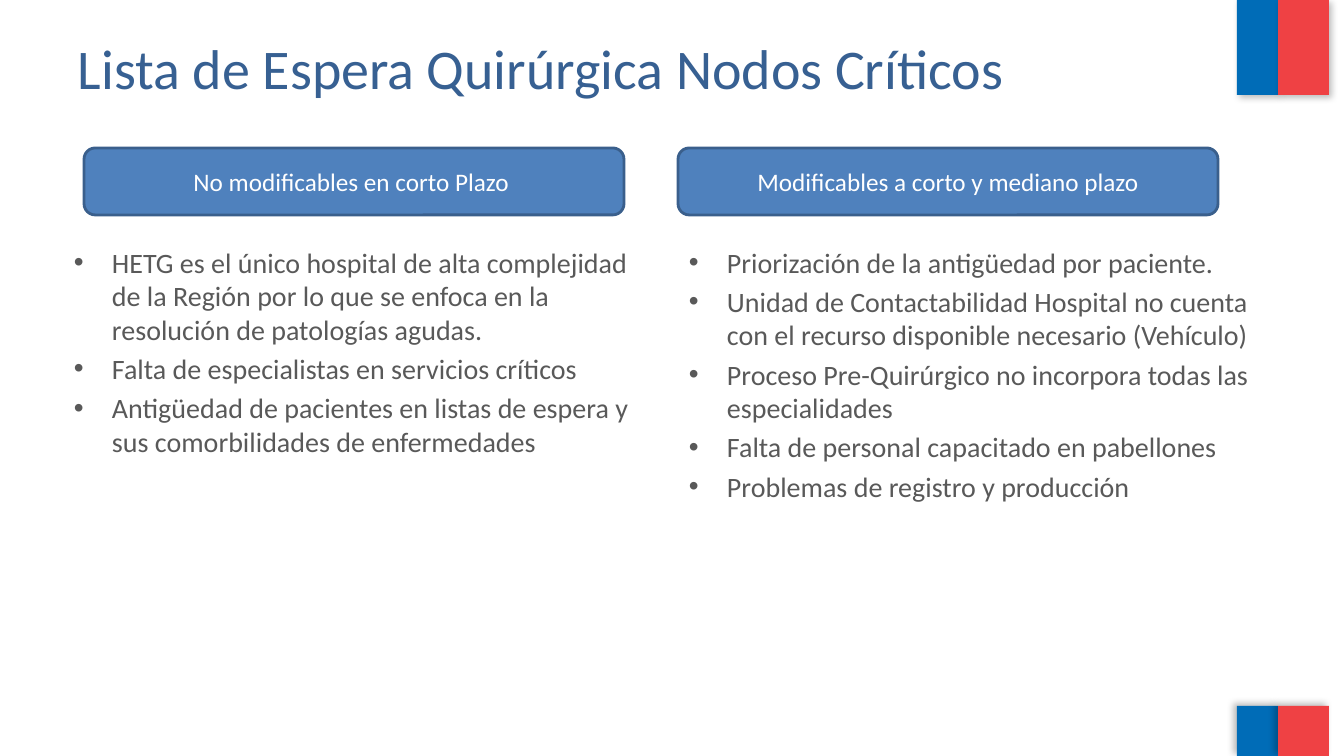
from typing import NamedTuple

from lxml import etree
from pptx import Presentation
from pptx import util as u
from pptx.dml.color import RGBColor
from pptx.enum import shapes, text
from pptx.oxml.ns import qn

EMU_PER_PX = 914400 / 100.8
FONT = "Calibri"
BLUE, RED = "006CB7", "EF4144"
INSET_X, INSET_Y = 6, 5


class Box(NamedTuple):
    left: int
    top: int
    width: int
    height: int


class FlagBlock(NamedTuple):
    box: Box
    color: str
    shadow_angle: int


class Column(NamedTuple):
    header: str
    header_box: Box
    body_box: Box
    points: list[str]


FLAG_BLOCKS = [
    FlagBlock(Box(1237, -1, 41, 96), BLUE, 45),
    FlagBlock(Box(1278, 0, 51, 95), RED, 45),
    FlagBlock(Box(1237, 706, 41, 50), BLUE, 215),
    FlagBlock(Box(1278, 706, 51, 50), RED, 215),
]

COLUMNS = [
    Column("No modificables en corto Plazo ", Box(84, 148, 540, 67), Box(68, 240, 594, 435), [
        "HETG es el único hospital de alta complejidad de la Región por lo que se enfoca "
        "en la resolución de patologías agudas.",
        "Falta de especialistas en servicios críticos",
        "Antigüedad de pacientes en listas de espera y sus comorbilidades de enfermedades",
    ]),
    Column("Modificables a corto y mediano plazo", Box(678, 148, 540, 67), Box(683, 240, 594, 435), [
        "Priorización de la antigüedad por paciente.",
        "Unidad de Contactabilidad Hospital no cuenta con el recurso disponible necesario (Vehículo)",
        "Proceso Pre-Quirúrgico no incorpora todas las especialidades",
        "Falta de personal capacitado en pabellones",
        "Problemas de registro y producción",
    ]),
]


def px(length: int) -> int:
    return round(length * EMU_PER_PX)


def rgb(color: str) -> RGBColor:
    return RGBColor.from_string(color)


def place(box: Box) -> list[int]:
    return [px(length) for length in box]


def add_run(paragraph, words: str, size: int, color: str) -> None:
    run = paragraph.add_run()
    run.text = words
    run.font.name, run.font.size = FONT, u.Pt(size)
    run.font.color.rgb = rgb(color)


def add_filled(slide, kind, box: Box, color: str):
    shape = slide.shapes.add_shape(kind, *place(box))
    shape.shadow.inherit = False
    shape.fill.solid()
    shape.fill.fore_color.rgb = rgb(color)
    return shape


def add_frame(slide, box: Box):
    frame = slide.shapes.add_textbox(*place(box)).text_frame
    frame.word_wrap = True
    frame.margin_left = frame.margin_right = px(INSET_X)
    frame.margin_top = frame.margin_bottom = px(INSET_Y)
    return frame


def add_flag_block(slide, block: FlagBlock) -> None:
    shape = add_filled(slide, shapes.MSO_SHAPE.RECTANGLE, block.box, block.color)
    shape.line.fill.background()
    effects = shape._element.spPr.find(qn("a:effectLst"))
    shadow = etree.SubElement(effects, qn("a:outerShdw"), blurRad=str(u.Pt(5)), dist=str(u.Pt(3)),
                              dir=str(block.shadow_angle * 60000), rotWithShape="0")
    tint = etree.SubElement(shadow, qn("a:srgbClr"), val="000000")
    etree.SubElement(tint, qn("a:alpha"), val="25000")


def add_bullet(paragraph, indent: int) -> None:
    properties = paragraph._p.get_or_add_pPr()
    properties.set("marL", str(px(indent)))
    properties.set("indent", str(-px(indent)))
    etree.SubElement(properties, qn("a:buFont"), typeface="Arial")
    etree.SubElement(properties, qn("a:buChar"), char="•")


def add_column(slide, column: Column) -> None:
    # Bulleted points
    body = add_frame(slide, column.body_box)
    for index, point in enumerate(column.points):
        paragraph = body.add_paragraph() if index else body.paragraphs[0]
        paragraph.space_before = u.Pt(4 if index else 0)
        add_bullet(paragraph, 38)
        add_run(paragraph, point, 20, "595959")

    # Header
    header = add_filled(slide, shapes.MSO_SHAPE.ROUNDED_RECTANGLE, column.header_box, "4F81BD")
    header.line.color.rgb = rgb("3A5F8C")
    header.line.width = u.Pt(2)
    header.text_frame.word_wrap = True
    header.text_frame.vertical_anchor = text.MSO_ANCHOR.MIDDLE
    caption = header.text_frame.paragraphs[0]
    caption.alignment = text.PP_ALIGN.CENTER
    add_run(caption, column.header, 18, "FFFFFF")


def main() -> None:
    deck = Presentation()
    deck.slide_width, deck.slide_height = px(1344), px(756)
    slide = deck.slides.add_slide(deck.slide_layouts[6])

    # Flag blocks in the right-hand corners
    for block in FLAG_BLOCKS:
        add_flag_block(slide, block)

    # Title
    title = add_frame(slide, Box(72, 28, 1200, 126))
    add_run(title.paragraphs[0], "Lista de Espera Quirúrgica Nodos Críticos", 40, "376092")

    # Columns
    for column in COLUMNS:
        add_column(slide, column)

    deck.save("out.pptx")


if __name__ == "__main__":
    main()
